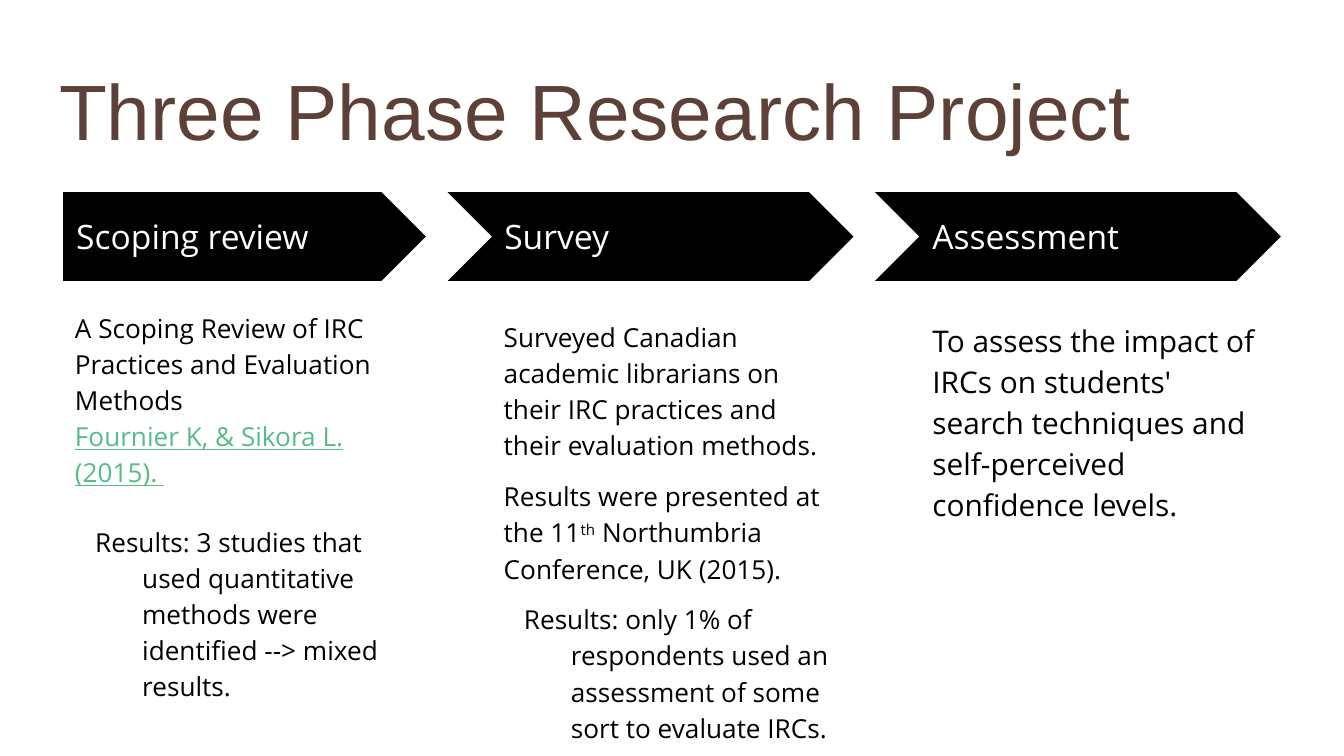
from pptx import Presentation
from pptx.dml.color import RGBColor
from pptx.enum.shapes import MSO_SHAPE
from pptx.enum.text import MSO_ANCHOR, PP_ALIGN
from pptx.util import Pt

TITLE = "Three Phase Research Project"
BLACK, WHITE, BROWN, GREEN = "000000", "FFFFFF", "5D4037", "57BB8A"
HANGING = {"margin": 36, "indent": -25.2}

PHASES = [
    {
        "heading": "Scoping review", "size": 14, "before": 14, "after": 4, "top": 157.7,
        "details": [
            ([("A Scoping Review of IRC Practices and Evaluation Methods \v", {}),
              ("Fournier K, & Sikora L. (2015). ", {"color": GREEN, "underline": True})], {}),
            ([("Results: 3 studies that used quantitative methods were identified "
               "--> mixed results.", {})], HANGING),
        ],
    },
    {
        "heading": "Survey", "size": 14, "before": 0, "after": 8, "top": 162.7,
        "details": [
            ([("Surveyed Canadian academic librarians on their IRC practices and "
               "their evaluation methods.", {})], {}),
            ([("Results were presented at the 11", {}), ("th", {"baseline": 30}),
              (" Northumbria Conference, UK (2015).", {})], {}),
            ([("Results: only 1% of respondents used an assessment of some sort "
               "to evaluate IRCs.", {})], HANGING),
        ],
    },
    {
        "heading": "Assessment", "size": 16, "before": 0, "after": 0, "top": 162.7,
        "details": [
            ([("To assess the impact of IRCs on students' search techniques and "
               "self-perceived confidence levels.", {})], {}),
        ],
    },
]

ARROW_TOP, ARROW_HEIGHT = 103, 47.5
ARROW_RIGHT, ARROW_STEP = 228.2, 229
PLATE_WIDTH, CHEVRON_WIDTH = 194.4, 217.4
HEADING_LEFT, HEADING_STEP = 33.8, 229.3
DETAIL_LEFT, DETAIL_STEP = 33.1, 229.7


def rgb(code):
    return RGBColor.from_string(code)


def add_text(paragraph, text, size=14, color=BLACK, font="Open Sans",
             underline=None, baseline=None):
    for index, line in enumerate(text.split("\v")):
        if index:
            paragraph.add_line_break()
        if not line:
            continue
        run = paragraph.add_run()
        run.text = line
        run.font.size = Pt(size)
        run.font.name = font
        run.font.color.rgb = rgb(color)
        run.font.underline = underline
        if baseline:
            run._r.get_or_add_rPr().set("baseline", str(baseline * 1000))


def set_frame(frame, anchor):
    frame.word_wrap = True
    frame.vertical_anchor = anchor
    frame.margin_left = frame.margin_right = Pt(7.2)
    frame.margin_top = frame.margin_bottom = Pt(7.2)
    return frame


def add_frame(slide, left, top, width, height, anchor):
    box = slide.shapes.add_textbox(Pt(left), Pt(top), Pt(width), Pt(height))
    return set_frame(box.text_frame, anchor)


def add_arrow(slide, column):
    kind, width = ((MSO_SHAPE.CHEVRON, CHEVRON_WIDTH) if column
                   else (MSO_SHAPE.PENTAGON, PLATE_WIDTH))
    left = ARROW_RIGHT + column * ARROW_STEP - width
    arrow = slide.shapes.add_shape(kind, Pt(left), Pt(ARROW_TOP), Pt(width), Pt(ARROW_HEIGHT))
    arrow.shadow.inherit = False
    arrow.fill.solid()
    arrow.fill.fore_color.rgb = rgb(BLACK)
    arrow.line.fill.background()


def add_details(slide, column, phase):
    frame = add_frame(slide, DETAIL_LEFT + column * DETAIL_STEP, phase["top"],
                      194.4, 208.8, MSO_ANCHOR.TOP)
    for index, (pieces, layout) in enumerate(phase["details"]):
        paragraph = frame.add_paragraph() if index else frame.paragraphs[0]
        paragraph.line_spacing = 1.15
        paragraph.space_before = Pt(phase["before"])
        paragraph.space_after = Pt(phase["after"])
        if layout:
            properties = paragraph._p.get_or_add_pPr()
            properties.set("marL", str(Pt(layout["margin"])))
            properties.set("indent", str(Pt(layout["indent"])))
        for text, style in pieces:
            add_text(paragraph, text, size=phase["size"], **style)


def main():
    deck = Presentation()
    deck.slide_width, deck.slide_height = Pt(720), Pt(405)
    slide = deck.slides.add_slide(deck.slide_layouts[5])

    title = slide.shapes.title
    title.left, title.top, title.width, title.height = Pt(24.5), Pt(25.2), Pt(671), Pt(65.5)
    title_line = set_frame(title.text_frame, MSO_ANCHOR.BOTTOM).paragraphs[0]
    title_line.alignment = PP_ALIGN.LEFT
    add_text(title_line, TITLE, size=42, color=BROWN, font="Arial")

    for column, phase in enumerate(PHASES):
        add_arrow(slide, column)
        heading = add_frame(slide, HEADING_LEFT + column * HEADING_STEP, 114.5,
                            177.8, 24.5, MSO_ANCHOR.MIDDLE)
        add_text(heading.paragraphs[0], phase["heading"], size=18, color=WHITE)
        add_details(slide, column, phase)

    deck.save("out.pptx")


if __name__ == "__main__":
    main()
